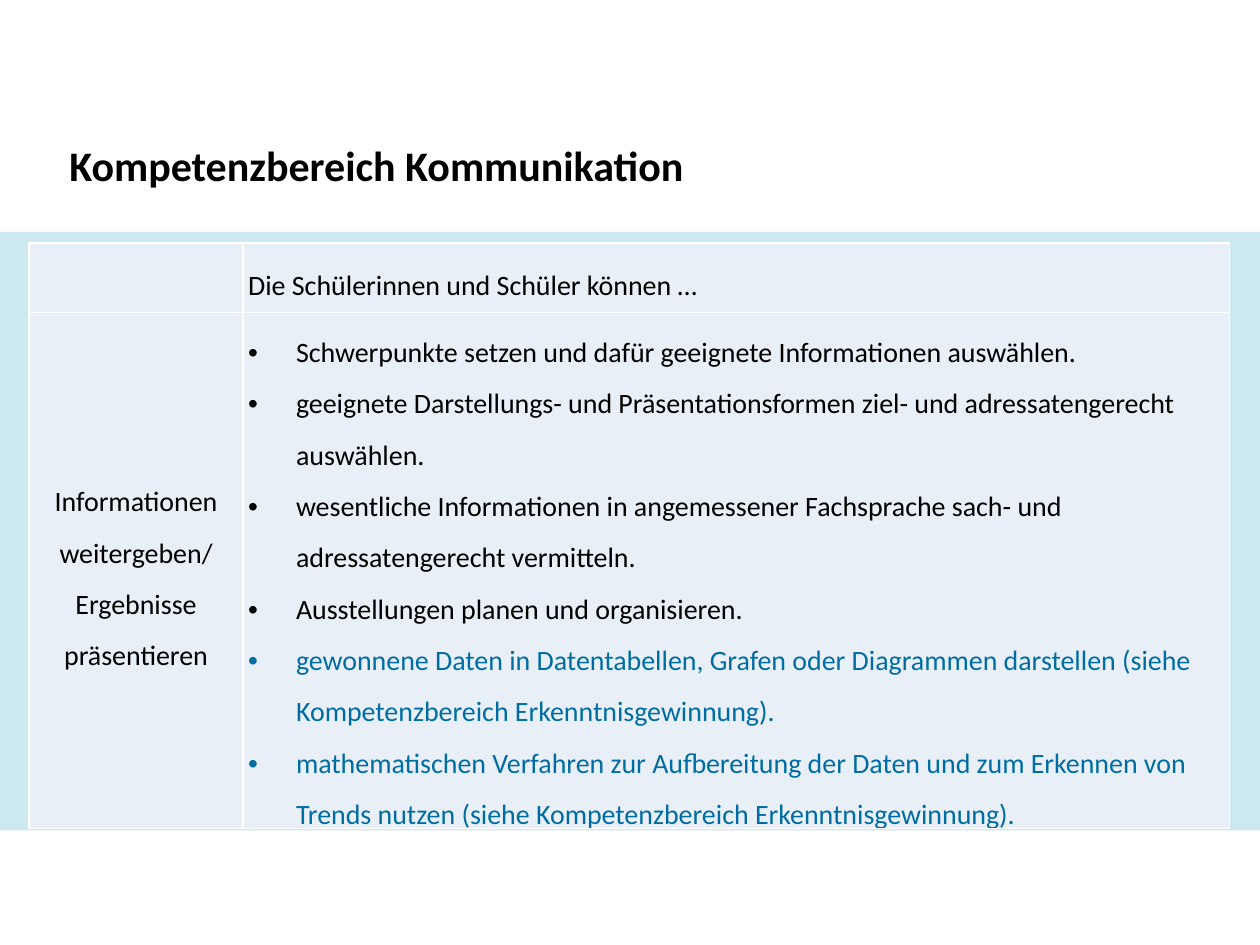
"""Builds the slide on the competence area of communication."""
from lxml import etree
from pptx import Presentation
from pptx import util as u
from pptx.dml.color import RGBColor
from pptx.enum import shapes, text
from pptx.oxml.ns import qn

COLORS = {"band": "CCE9F2", "cell": "E9EFF7", "border": "FFFFFF",
          "ink": "000000", "accent": "006DA2"}
FONT = "Calibri"
SKILLS = [
    ("Schwerpunkte setzen und dafür geeignete Informationen auswählen.", "ink"),
    ("geeignete Darstellungs- und Präsentationsformen ziel- und adressatengerecht auswählen.", "ink"),
    ("wesentliche Informationen in angemessener Fachsprache sach- und adressatengerecht vermitteln.", "ink"),
    ("Ausstellungen planen und organisieren.", "ink"),
    ("gewonnene Daten in Datentabellen, Grafen oder Diagrammen darstellen "
     "(siehe Kompetenzbereich Erkenntnisgewinnung).", "accent"),
    ("mathematischen Verfahren zur Aufbereitung der Daten und zum Erkennen von Trends nutzen "
     "(siehe Kompetenzbereich Erkenntnisgewinnung).", "accent"),
]


class Slide:
    """Holds the style and the current slide."""

    def __init__(self, page):
        self.page = page

    def color(self, name):
        return RGBColor.from_string(COLORS[name])

    def style(self, para, size, color="ink", bold=False):
        for span in para.runs:
            span.font.name = FONT
            span.font.size = u.Pt(size)
            span.font.bold = bold
            span.font.color.rgb = self.color(color)

    def band(self, left, top, width, height):
        box = self.page.shapes.add_shape(
            shapes.MSO_SHAPE.RECTANGLE, *map(u.Inches, (left, top, width, height)))
        box.shadow.inherit = False
        box.fill.solid()
        box.fill.fore_color.rgb = self.color("band")
        box.line.fill.background()

    def title(self, wording, left, top, width, height):
        box = self.page.shapes.title
        box.left, box.top, box.width, box.height = map(u.Inches, (left, top, width, height))
        frame = box.text_frame
        frame.text = wording
        frame.word_wrap = False
        frame.auto_size = text.MSO_AUTO_SIZE.SHAPE_TO_FIT_TEXT
        frame.vertical_anchor = text.MSO_ANCHOR.MIDDLE
        para = frame.paragraphs[0]
        para.alignment = text.PP_ALIGN.LEFT
        self.style(para, 24, bold=True)

    def table(self, left, top, columns, rows):
        frame = self.page.shapes.add_table(
            len(rows), len(columns), u.Inches(left), u.Inches(top),
            u.Inches(sum(columns)), u.Inches(sum(rows)))
        grid = frame.table
        grid.first_row = grid.horz_banding = False
        for column, width in zip(grid.columns, columns):
            column.width = u.Inches(width)
        for row, height in zip(grid.rows, rows):
            row.height = u.Inches(height)
        for cell in grid.iter_cells():
            self.format_cell(cell)
        return grid

    def format_cell(self, cell):
        properties = cell._tc.get_or_add_tcPr()
        for side in ("a:lnL", "a:lnR", "a:lnT", "a:lnB"):
            line = etree.SubElement(properties, qn(side), w=str(u.Pt(0.96)))
            fill = etree.SubElement(line, qn("a:solidFill"))
            etree.SubElement(fill, qn("a:srgbClr"), val=COLORS["border"])
        cell.fill.solid()
        cell.fill.fore_color.rgb = self.color("cell")
        cell.margin_left = cell.margin_right = u.Inches(0.04)
        cell.margin_top = cell.margin_bottom = u.Inches(0.05)

    def cell_text(self, cell, wording, alignment=text.PP_ALIGN.LEFT, after=0):
        cell.text_frame.text = wording
        cell.vertical_anchor = text.MSO_ANCHOR.MIDDLE
        para = cell.text_frame.paragraphs[0]
        para.alignment = alignment
        para.line_spacing = 1.5
        para.space_after = u.Pt(after)
        self.style(para, 16)

    def cell_bullets(self, cell, items):
        cell.text_frame.text = "\n".join(wording for wording, _ in items)
        for para, (_, color) in zip(cell.text_frame.paragraphs, items):
            properties = para._p.get_or_add_pPr()
            properties.set("marL", str(u.Inches(0.38)))
            properties.set("indent", str(-u.Inches(0.38)))
            tint = etree.SubElement(properties, qn("a:buClr"))
            etree.SubElement(tint, qn("a:srgbClr"), val=COLORS[color])
            etree.SubElement(properties, qn("a:buFont"), typeface="Arial")
            etree.SubElement(properties, qn("a:buChar"), char="•")
            para.line_spacing = 1.5
            self.style(para, 16, color)


def main():
    deck = Presentation()
    deck.slide_width, deck.slide_height = u.Inches(10), u.Inches(7.5)
    slide = Slide(deck.slides.add_slide(deck.slide_layouts[5]))
    slide.band(0, 1.84, 10, 4.75)
    slide.title("Kompetenzbereich Kommunikation", 0.45, 1.06, 5.12, 0.5)
    grid = slide.table(0.23, 1.93, columns=(1.7, 7.83), rows=(0.55, 3.42))
    slide.cell_text(grid.cell(0, 1), "Die Schülerinnen und Schüler können …")
    slide.cell_text(grid.cell(1, 0), "Informationen weitergeben/ Ergebnisse präsentieren",
                    text.PP_ALIGN.CENTER, after=6)
    slide.cell_bullets(grid.cell(1, 1), SKILLS)
    deck.save("out.pptx")


if __name__ == "__main__":
    main()
